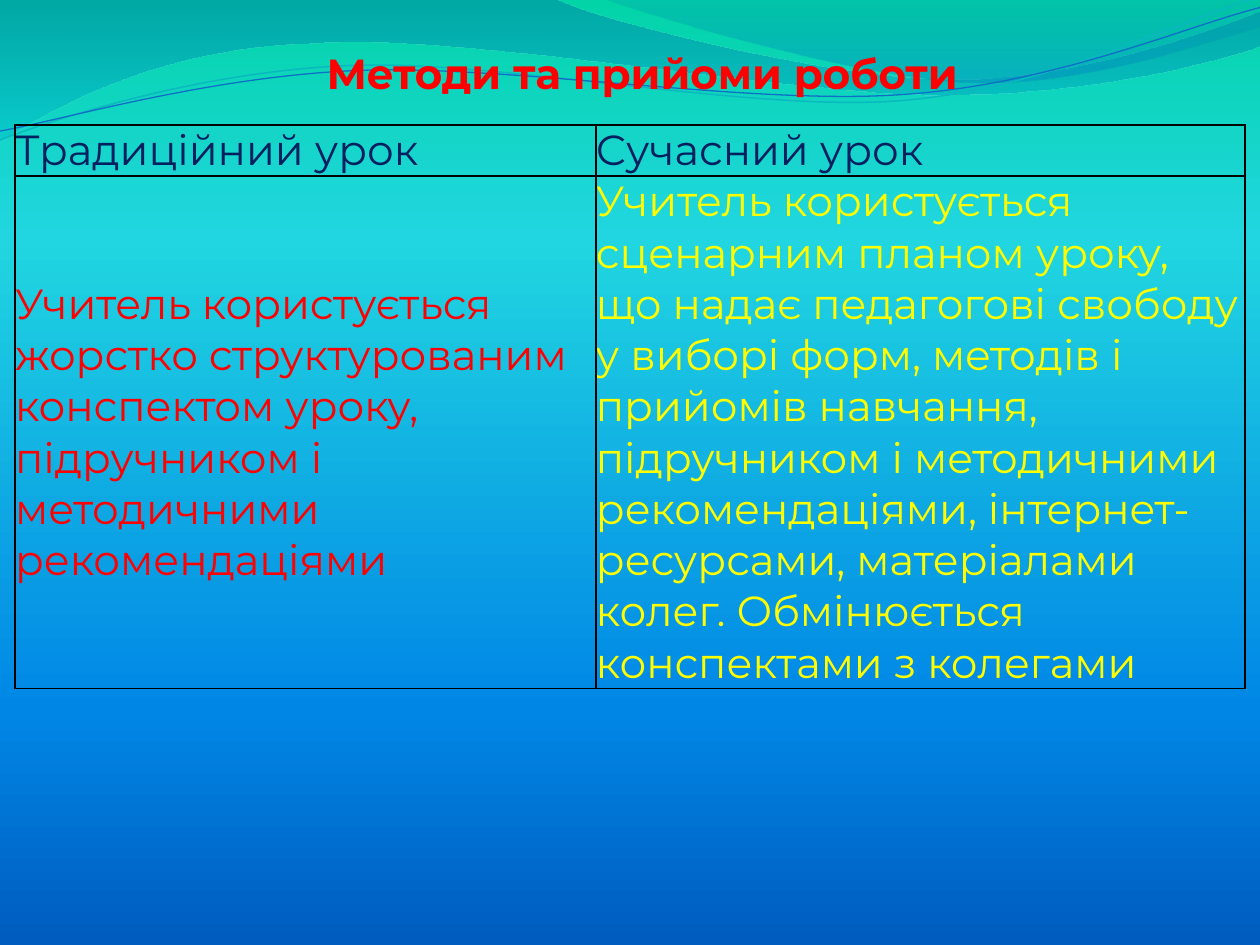
import math
from itertools import chain

from lxml import etree
from pptx import Presentation
from pptx import util as u
from pptx.dml.color import RGBColor
from pptx.enum import text
from pptx.oxml import parse_xml
from pptx.oxml.ns import nsdecls, qn

TITLE = "Методи та прийоми роботи"
ROWS = [
    [("Традиційний урок", "navy"), ("Сучасний урок", "navy")],
    [("Учитель користується жорстко структурованим конспектом уроку, "
      "підручником і методичними рекомендаціями", "red"),
     ("Учитель користується сценарним планом уроку, що надає педагогові свободу "
      "у виборі форм, методів і прийомів навчання, підручником і методичними "
      "рекомендаціями, інтернет-ресурсами, матеріалами колег. "
      "Обмінюється конспектами з колегами", "yellow")],
]
COLORS = {
    "red": "FF0000", "navy": "002060", "yellow": "FFFF00", "black": "000000",
    "mint": "03D4A8", "aqua": "21D6E0", "azure": "0087E6", "deep": "005CBF",
    "teal": "0074A1", "cyan": "00C6CF", "sea": "00A1A9", "lake": "008BBF",
    "thread": "0AB8BF", "blue": "0F6FC6",
}
FONT, SIZE = "Montserrat", 24
COLS, HEIGHTS, TABLE_HEIGHT = (4.61, 5.15), (0.14, 0.7), 4.8
TILT = 2.7
BACKDROP = [(0, "mint", 100), (25, "aqua", 100), (75, "azure", 100), (100, "deep", 100)]
WAVES = [
    ([(0, 0), (4.4, -0.01), (4.76, 0.17, 6.64, 0.63, 7.58, 0.63),
      (8.53, 0.63, 9.58, 0.26, 10, 0.09), (10.01, 0.36),
      (9.83, 0.44, 8.7, 0.76, 7.46, 0.75), (6.22, 0.75, 3.82, 0.28, 2.57, 0.34),
      (1.29, 0.36, 0.46, 0.83, -0.01, 1.13), (0, 0)],
     [(0, "teal", 45), (100, "cyan", 55)]),
    ([(4.79, -0.01), (5.09, 0.11, 6.82, 0.62, 7.69, 0.65),
      (8.56, 0.69, 9.61, 0.32, 10, 0.21), (10, 0), (4.79, -0.01)],
     [(0, "sea", 30), (80, "lake", 45)]),
]
THREADS = [
    ([(0, 1.11), (0.48, 0.93, 1.58, 0.57, 2.77, 0.52),
      (3.95, 0.47, 5.93, 0.89, 7.13, 0.8), (8.33, 0.71, 9.38, 0.15, 9.98, -0.02)],
     (4.99, 0.57), "thread", 0.85),
    ([(0, 1.04), (0.47, 0.96, 1.64, 0.61, 2.83, 0.56),
      (4.03, 0.51, 5.97, 0.84, 7.17, 0.75), (8.36, 0.67, 9.41, 0.21, 10, 0.06)],
     (5, 0.59), "blue", 0.75),
]


def rgb(name):
    return RGBColor.from_string(COLORS[name])


def paint_gradient(fill, parent, stops):
    fill.solid()
    marks = "".join(
        f'<a:gs pos="{pos * 1000}"><a:srgbClr val="{COLORS[name]}">'
        f'<a:alpha val="{alpha * 1000}"/></a:srgbClr></a:gs>'
        for pos, name, alpha in stops)
    parent.replace(parent.find(qn("a:solidFill")), parse_xml(
        f'<a:gradFill {nsdecls("a")} rotWithShape="1"><a:gsLst>{marks}</a:gsLst>'
        '<a:lin ang="5400000" scaled="0"/></a:gradFill>'))


def turn(segments, pivot):
    cos, sin = math.cos(math.radians(TILT)), math.sin(math.radians(TILT))
    cx, cy = pivot
    return [tuple(chain.from_iterable(
        (cx + (x - cx) * cos - (y - cy) * sin, cy + (x - cx) * sin + (y - cy) * cos)
        for x, y in zip(seg[::2], seg[1::2]))) for seg in segments]


def add_curve(s, segments, close):
    first, *rest = [(u.Inches(x), u.Inches(y))
                    for seg in segments for x, y in zip(seg[::2], seg[1::2])]
    builder = s.shapes.build_freeform(*first)
    builder.add_line_segments(rest, close=close)
    sp = builder.convert_to_shape()
    sp.shadow.inherit = False
    lines = iter(list(sp.element.iter(qn("a:lnTo"))))
    for seg in segments[1:]:
        line = next(lines)
        if len(seg) == 6:
            line.addprevious(etree.Element(qn("a:cubicBezTo")))
            curve = line.getprevious()
            for step in (line, next(lines), next(lines)):
                curve.append(step[0])
                step.getparent().remove(step)
    return sp


def add_waves(s):
    curves = []
    for segments, stops in WAVES:
        sp = add_curve(s, segments, True)
        paint_gradient(sp.fill, sp.element.spPr, stops)
        sp.line.fill.background()
        curves.append(sp)
    for segments, pivot, name, width in THREADS:
        sp = add_curve(s, turn(segments, pivot), False)
        sp.rotation = 360 - TILT
        sp.fill.background()
        sp.line.color.rgb, sp.line.width = rgb(name), u.Pt(width)
        curves.append(sp)
    for sp in curves:
        s.slide_layout.shapes.element.append(sp.element)


def format_text(p, name, bold=False):
    p.font.name, p.font.size, p.font.bold = FONT, u.Pt(SIZE), bold
    p.font.color.rgb = rgb(name)


def add_borders(cell):
    cell.fill.background()
    tcPr = cell._tc.get_or_add_tcPr()
    for i, side in enumerate("LRTB"):
        tcPr.insert(i, parse_xml(
            f'<a:ln{side} {nsdecls("a")} w="12700"><a:solidFill>'
            f'<a:srgbClr val="{COLORS["black"]}"/></a:solidFill></a:ln{side}>'))


def add_title(s):
    sp = s.shapes.title
    sp.left, sp.top, sp.width, sp.height = map(u.Inches, (2.44, 0.13, 5.31, 0.64))
    tf = sp.text_frame
    tf.text, tf.word_wrap = TITLE, False
    tf.auto_size, tf.vertical_anchor = text.MSO_AUTO_SIZE.NONE, text.MSO_ANCHOR.TOP
    p = tf.paragraphs[0]
    p.alignment, p.line_spacing = text.PP_ALIGN.CENTER, 1.5
    format_text(p, "red", True)


def add_lesson_table(s):
    frame = s.shapes.add_table(
        len(ROWS), len(COLS), u.Inches(0.12), u.Inches(0.99),
        u.Inches(sum(COLS)), u.Inches(TABLE_HEIGHT))
    table = frame.table
    table.first_row = table.horz_banding = False
    for col, width in zip(table.columns, COLS):
        col.width = u.Inches(width)
    for row, height, items in zip(table.rows, HEIGHTS, ROWS):
        row.height = u.Inches(height)
        for cell, (words, name) in zip(row.cells, items):
            cell.text = words
            cell.margin_left = cell.margin_right = cell.margin_top = cell.margin_bottom = 0
            cell.vertical_anchor = text.MSO_ANCHOR.MIDDLE
            format_text(cell.text_frame.paragraphs[0], name)
            add_borders(cell)
    frame.height = u.Inches(TABLE_HEIGHT)


def main():
    prs = Presentation()
    prs.slide_width, prs.slide_height = u.Inches(10), u.Inches(7.5)
    s = prs.slides.add_slide(prs.slide_layouts[5])
    fill = s.background.fill
    paint_gradient(fill, s.element.find(".//" + qn("p:bgPr")), BACKDROP)
    add_waves(s)
    add_title(s)
    add_lesson_table(s)
    prs.save("out.pptx")


if __name__ == "__main__":
    main()
